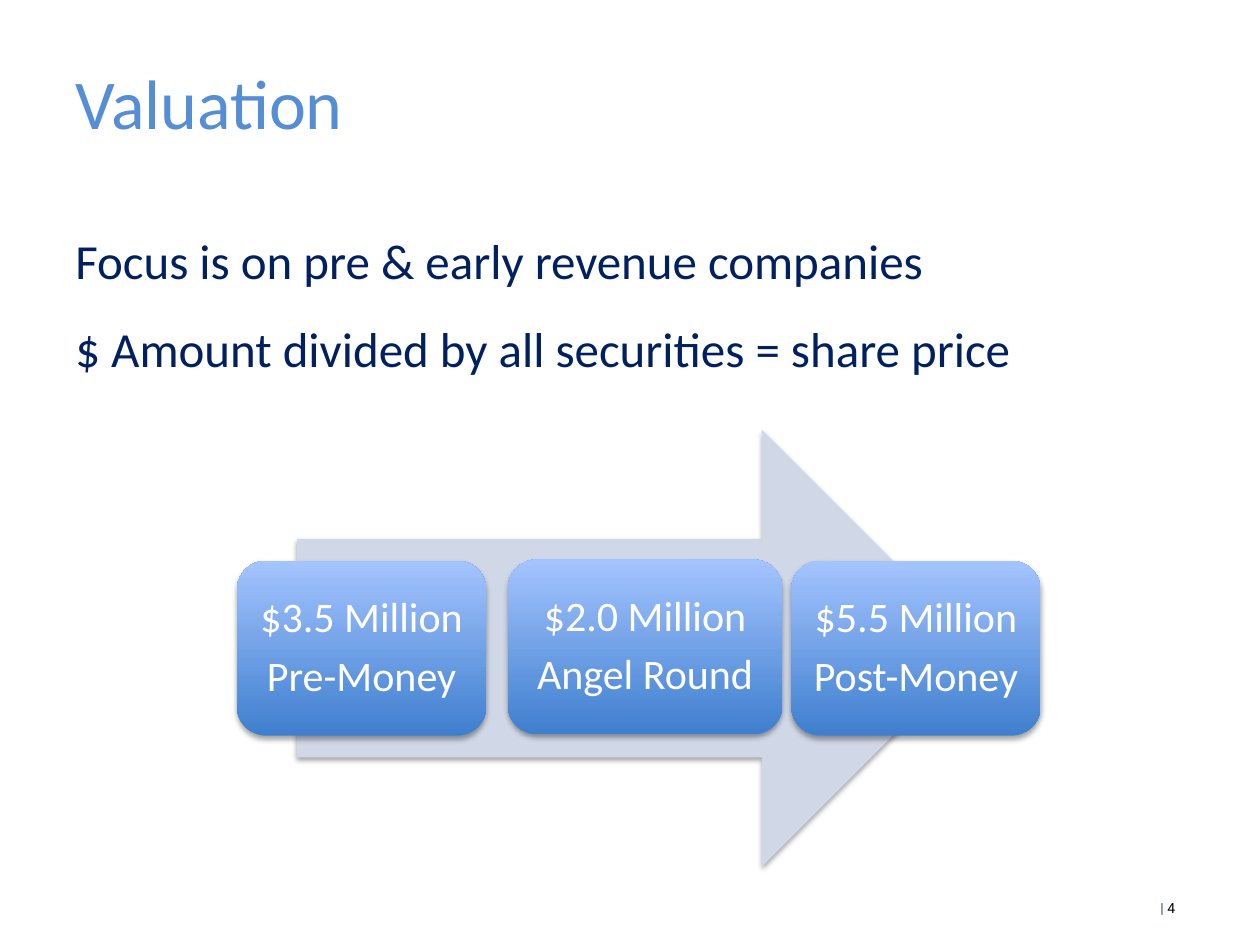
import pptx
import pptx.dml.color
import pptx.enum.shapes
import pptx.enum.text
import pptx.oxml
import pptx.oxml.ns
import pptx.util

Inches = pptx.util.Inches
Pt = pptx.util.Pt
Shapes = pptx.enum.shapes.MSO_SHAPE
Align = pptx.enum.text.PP_ALIGN
Anchor = pptx.enum.text.MSO_ANCHOR


def color(value):
    return pptx.dml.color.RGBColor.from_string(value)


def set_attributes(target, values):
    for name, value in values.items():
        setattr(target, name, value)


def add_run(paragraph, text, size, fill, font="Calibri"):
    run = paragraph.add_run()
    run.text = text
    set_attributes(run.font, {"size": Pt(size), "name": font})
    run.font.color.rgb = color(fill)


def write_lines(frame, lines, size, fill, paragraph_format):
    for index, line in enumerate(lines):
        paragraph = frame.add_paragraph() if index else frame.paragraphs[0]
        set_attributes(paragraph, paragraph_format)
        add_run(paragraph, line, size, fill)


def add_text_block(slide, box, lines, size, fill, paragraph_format):
    frame = slide.shapes.add_textbox(*map(Inches, box)).text_frame
    frame.word_wrap = True
    write_lines(frame, lines, size, fill, paragraph_format)


def add_soft_shape(slide, kind, box):
    """Add a borderless shape with a soft shadow below it."""
    shape = slide.shapes.add_shape(kind, *map(Inches, box))
    shape.line.fill.background()
    shape.shadow.inherit = False
    effects = shape._element.spPr.find(pptx.oxml.ns.qn("a:effectLst"))
    effects.append(pptx.oxml.parse_xml(
        f'<a:outerShdw {pptx.oxml.ns.nsdecls("a")} blurRad="{Pt(3.1)}" '
        f'dist="{Pt(1.8)}" dir="5400000" rotWithShape="0">'
        '<a:srgbClr val="000000"><a:alpha val="35000"/></a:srgbClr>'
        '</a:outerShdw>'))
    return shape


def add_card(slide, box, lines):
    card = add_soft_shape(slide, Shapes.ROUNDED_RECTANGLE, box)
    card.fill.gradient()
    card.fill.gradient_angle = 90
    stops = ((0, "3F7FCE"), (1, "A4C4FF"))
    for stop, (position, value) in zip(card.fill.gradient_stops, stops):
        stop.position = position
        stop.color.rgb = color(value)
    frame = card.text_frame
    margin = Inches(0.1)
    set_attributes(frame, {
        "word_wrap": True, "vertical_anchor": Anchor.MIDDLE,
        "margin_left": margin, "margin_right": margin,
        "margin_top": margin, "margin_bottom": margin})
    write_lines(frame, lines, 24, "FFFFFF", {
        "alignment": Align.CENTER, "line_spacing": 0.9,
        "space_after": Pt(7.5)})


def add_funding_process(slide, box):
    """Arrow with three cards; box spans all the parts."""
    left, top, width, height = box
    arrow_width = 0.85 * width
    arrow = add_soft_shape(slide, Shapes.RIGHT_ARROW, (
        left + (width - arrow_width) / 2, top, arrow_width, height))
    arrow.fill.solid()
    arrow.fill.fore_color.rgb = color("D0D8E8")

    card_height = 0.4 * height
    card_top = top + (height - card_height) / 2
    cards = (
        (0, 0, 1.98, ("$3.5 Million", "Pre-Money")),
        (2.15, -0.01, 2.18, ("$2.0 Million", "Angel Round")),
        (4.4, 0, 1.98, ("$5.5 Million", "Post-Money")),
    )
    for x, y, card_width, lines in cards:
        add_card(slide, (left + x, card_top + y, card_width, card_height), lines)


def add_page_number(slide, box):
    frame = slide.shapes.add_textbox(*map(Inches, box)).text_frame
    set_attributes(frame, {
        "word_wrap": False, "margin_left": 0, "margin_right": 0,
        "margin_top": 0, "margin_bottom": 0})
    paragraph = frame.paragraphs[0]
    paragraph.alignment = Align.LEFT
    add_run(paragraph, "| ", 8, "1F497D", "Roboto")
    add_run(paragraph, "4", 8, "000000", "Roboto")


def main():
    presentation = pptx.Presentation()
    presentation.slide_width = Inches(10)
    presentation.slide_height = Inches(7.5)
    slide = presentation.slides.add_slide(presentation.slide_layouts[6])

    # Title and statements
    add_text_block(slide, (0.5, 0.42, 9, 0.75), ["Valuation"],
                   40, "558ED5", {"alignment": Align.LEFT})
    add_text_block(slide, (0.5, 1.78, 9, 1.5), [
        "Focus is on pre & early revenue companies",
        "$ Amount divided by all securities = share price",
    ], 28, "002060", {"space_before": Pt(5), "space_after": Pt(12)})

    # Funding process and footer
    add_funding_process(slide, (1.88, 3.41, 6.38, 3.47))
    add_page_number(slide, (9.21, 7.14, 0.54, 0.36))
    presentation.save("out.pptx")


if __name__ == "__main__":
    main()
